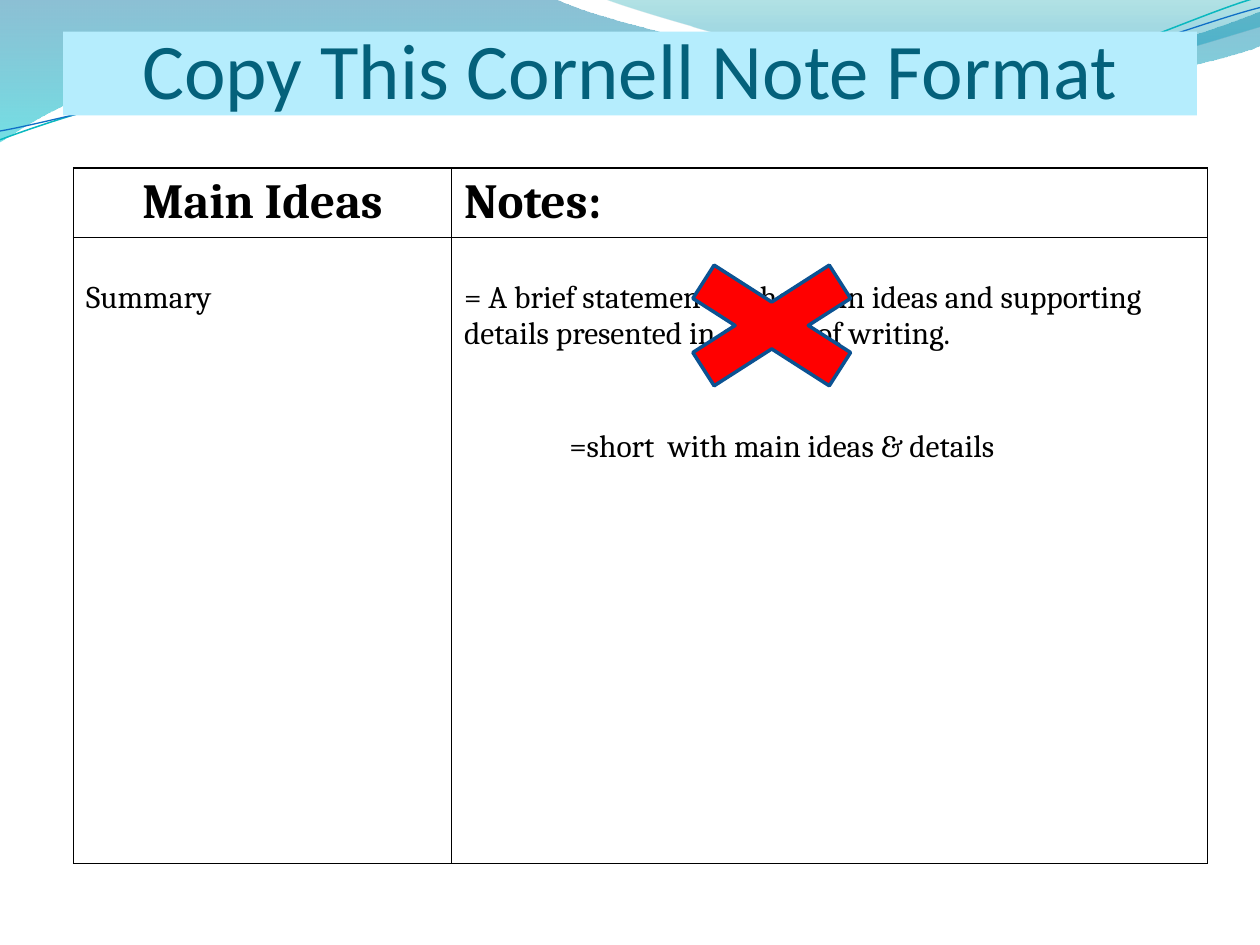
from dataclasses import dataclass

from lxml.etree import SubElement
from pptx import Presentation
from pptx.dml.color import RGBColor
from pptx.enum.shapes import MSO_SHAPE
from pptx.enum.text import MSO_ANCHOR, MSO_AUTO_SIZE, PP_ALIGN
from pptx.oxml.ns import qn
from pptx.util import Inches, Pt


@dataclass(frozen=True)
class Theme:
    text: RGBColor = RGBColor.from_string("000000")
    title: RGBColor = RGBColor.from_string("04617B")
    band: RGBColor = RGBColor.from_string("B5EDFD")
    cross: RGBColor = RGBColor.from_string("FF0000")
    outline: RGBColor = RGBColor.from_string("0B5292")
    heading_font: str = "Calibri"
    body_font: str = "Cambria"
    title_size: Pt = Pt(45)
    header_size: Pt = Pt(28)
    body_size: Pt = Pt(18)


theme = Theme()
prs = Presentation()
prs.slide_width, prs.slide_height = Inches(10), Inches(7.5)
W, H = prs.slide_width, prs.slide_height
s = prs.slides.add_slide(prs.slide_layouts[5])


def add_wave(start, segments, closed):
    points = [(Inches(seg[i]), Inches(seg[i + 1]))
              for seg in segments for i in range(0, len(seg), 2)]
    builder = s.shapes.build_freeform(Inches(start[0]), Inches(start[1]))
    builder.add_line_segments(points, close=closed)
    sp = builder.convert_to_shape()
    sp.shadow.inherit = False
    steps = iter(list(sp.element.spPr.iter(qn("a:lnTo"))))
    for seg in segments:
        step = next(steps)
        if len(seg) == 6:
            step.tag = qn("a:cubicBezTo")
            for extra in (next(steps), next(steps)):
                step.append(extra[0])
                extra.getparent().remove(extra)
    return sp


def style_text(p, size, font=theme.body_font, color=theme.text, bold=False):
    p.font.size, p.font.name, p.font.bold = size, font, bold
    p.font.color.rgb = color


filled_waves = [
    ((0, 0), [(4.4, -0.01), (4.76, 0.17, 6.64, 0.63, 7.58, 0.63),
              (8.53, 0.63, 9.58, 0.26, 10, 0.09), (10.01, 0.36),
              (9.83, 0.44, 8.7, 0.76, 7.46, 0.75),
              (6.22, 0.75, 3.82, 0.28, 2.57, 0.34),
              (1.29, 0.36, 0.46, 0.83, -0.01, 1.13)],
     [(0, "0074A1", 45), (1, "00C6CF", 55)]),
    ((4.79, -0.01), [(5.09, 0.11, 6.82, 0.62, 7.69, 0.65),
                     (8.56, 0.69, 9.61, 0.32, 10, 0.21), (10, 0)],
     [(0, "00A1A9", 30), (0.8, "008BBF", 45)]),
]
for start, segments, stops in filled_waves:
    sp = add_wave(start, segments, True)
    sp.line.fill.background()
    sp.fill.gradient()
    sp.fill.gradient_angle = 270
    for stop, (position, color, _) in zip(sp.fill.gradient_stops, stops):
        stop.position = position
        stop.color.rgb = RGBColor.from_string(color)
    for clr, (_, _, alpha) in zip(sp.element.spPr.iter(qn("a:srgbClr")), stops):
        SubElement(clr, qn("a:alpha"), val=str(alpha * 1000))

line_waves = [
    ((0, 1.11), [(0.48, 0.93, 1.58, 0.57, 2.77, 0.52),
                 (3.95, 0.47, 5.93, 0.89, 7.13, 0.8),
                 (8.33, 0.71, 9.38, 0.15, 9.98, -0.02)], "0AB8BF", 0.85),
    ((0, 1.04), [(0.47, 0.96, 1.64, 0.61, 2.83, 0.56),
                 (4.03, 0.51, 5.97, 0.84, 7.17, 0.75),
                 (8.36, 0.67, 9.41, 0.21, 10, 0.06)], "0F6FC6", 0.75),
]
for start, segments, color, width in line_waves:
    sp = add_wave(start, segments, False)
    sp.fill.background()
    sp.line.color.rgb = RGBColor.from_string(color)
    sp.line.width = Pt(width)

title = s.shapes.title
title.element.getparent().append(title.element)
title.left, title.top = int(W * 0.05), int(H / 30)
title.width, title.height = int(W * 0.9), int(H * 0.8 / 9)
title.fill.solid()
title.fill.fore_color.rgb = theme.band
tf = title.text_frame
tf.text = "Copy This Cornell Note Format"
tf.auto_size = MSO_AUTO_SIZE.NONE
tf.vertical_anchor = MSO_ANCHOR.BOTTOM
tf.margin_left = tf.margin_right = tf.margin_bottom = 0
tf.margin_top = Inches(0.05)
p = tf.paragraphs[0]
p.alignment = PP_ALIGN.CENTER
style_text(p, theme.title_size, theme.heading_font, theme.title)

col = int(W * 0.3)
row_heights = [Inches(0.55), Inches(4.97)]
rows = [
    ["Main Ideas", "Notes:"],
    ["Summary", "= A brief statement of the main ideas and supporting "
                "details presented in a piece of writing."],
]
table = s.shapes.add_table(2, 2, Inches(7 / 12), Inches(4 / 3),
                           3 * col, sum(row_heights)).table
table.first_row = table.horz_banding = False
table.columns[0].width, table.columns[1].width = col, 2 * col
for r, texts in enumerate(rows):
    table.rows[r].height = row_heights[r]
    for c, text in enumerate(texts):
        cell = table.cell(r, c)
        cell.text = text
        p = cell.text_frame.paragraphs[0]
        header = r == 0
        style_text(p, theme.header_size if header else theme.body_size, bold=header)
        if header and c == 0:
            p.alignment = PP_ALIGN.CENTER
        if not header:
            cell.margin_top = Inches(0.34)
        tcPr = cell._tc.get_or_add_tcPr()
        for side in ("lnL", "lnR", "lnT", "lnB"):
            ln = SubElement(tcPr, qn(f"a:{side}"), w=str(Pt(1)))
            fill = SubElement(ln, qn("a:solidFill"))
            SubElement(fill, qn("a:srgbClr"), val=str(theme.text))
        cell.fill.background()

box = s.shapes.add_textbox(Inches(4.42), Inches(3.33), Inches(3.76), Inches(0.4))
tf = box.text_frame
tf.text = "=short  with main ideas & details"
tf.word_wrap = False
tf.auto_size = MSO_AUTO_SIZE.SHAPE_TO_FIT_TEXT
style_text(tf.paragraphs[0], theme.body_size)

cross = s.shapes.add_shape(MSO_SHAPE.MATH_MULTIPLY, Inches(61 / 12), Inches(23 / 12),
                           Inches(25 / 12), Inches(4 / 3))
cross.shadow.inherit = False
cross.fill.solid()
cross.fill.fore_color.rgb = theme.cross
cross.line.color.rgb = theme.outline
cross.line.width = Pt(2)

prs.save("out.pptx")
